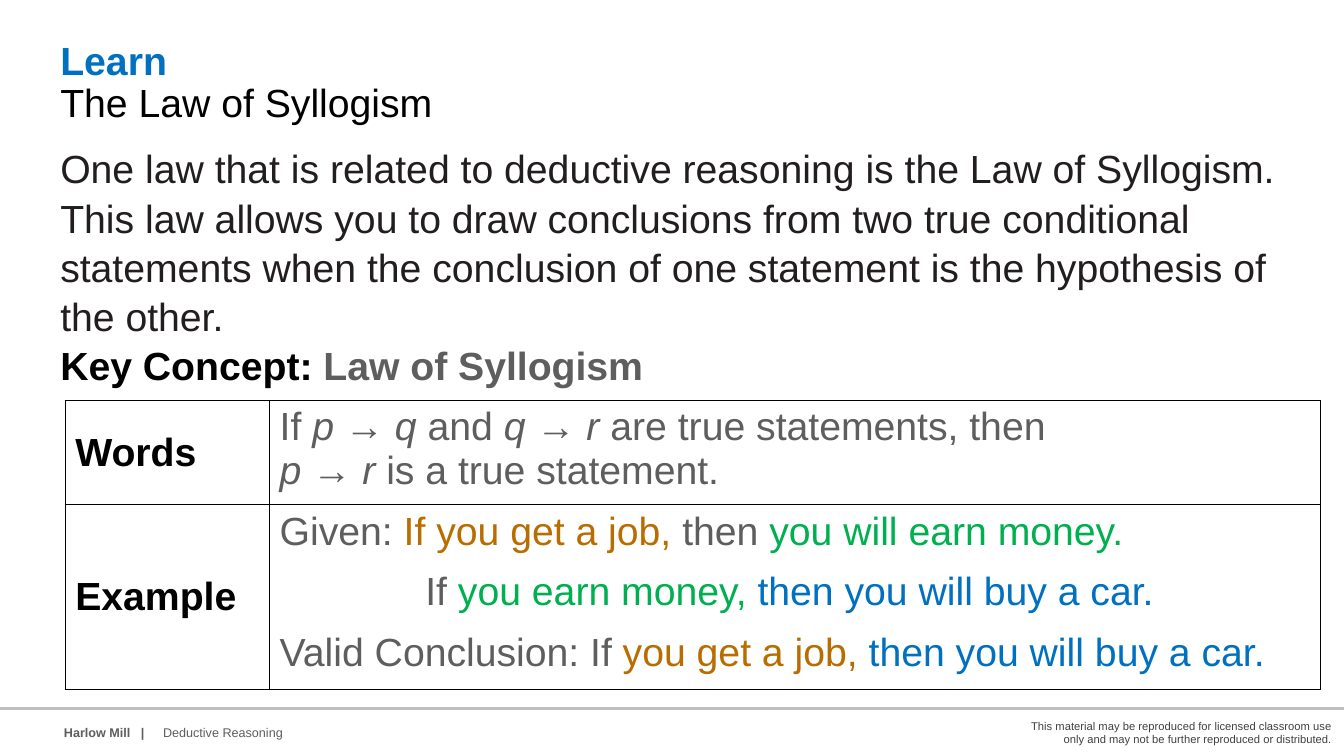
from lxml import etree
from pptx import Presentation
from pptx.dml.color import RGBColor
from pptx.enum.shapes import MSO_CONNECTOR
from pptx.enum.text import MSO_ANCHOR, PP_ALIGN
from pptx.oxml.ns import qn
from pptx.util import Pt

STRAIGHT = MSO_CONNECTOR.STRAIGHT
TOP, MIDDLE = MSO_ANCHOR.TOP, MSO_ANCHOR.MIDDLE
LEFT, CENTER, RIGHT = PP_ALIGN.LEFT, PP_ALIGN.CENTER, PP_ALIGN.RIGHT

FONT = "Arial"
WIDTH, HEIGHT = 960, 540
BLACK, WHITE, GREY = "000000", "FFFFFF", "5E5E5E"
BLUE, GREEN, ORANGE = "0070C0", "00B050", "B96D00"


def rgb(value):
    return RGBColor.from_string(value)


def write(paragraph, text, size=28, color=GREY, bold=False, italic=False):
    """Append text to a paragraph; each newline becomes a line break."""
    for index, line in enumerate(text.split("\n")):
        if index:
            paragraph.add_line_break()
        if line:
            run = paragraph.add_run()
            run.text = line
            font = run.font
            font.name, font.size = FONT, Pt(size)
            font.bold, font.italic = bold, italic
            font.color.rgb = rgb(color)


def add_text_box(slide, box, anchor=TOP, align=LEFT, spacing=1.0, wrap=True):
    """Add an empty text box and return its first paragraph."""
    frame = slide.shapes.add_textbox(*map(Pt, box)).text_frame
    frame.word_wrap = wrap
    frame.vertical_anchor = anchor
    paragraph = frame.paragraphs[0]
    paragraph.alignment, paragraph.line_spacing = align, spacing
    return paragraph


def add_footer(slide, left, top, width, height):
    rule = slide.shapes.add_connector(
        STRAIGHT, Pt(left), Pt(top), Pt(left + width), Pt(top))
    rule.line.color.rgb = rgb("BFBFBF")
    rule.line.width = Pt(1.75)
    etree.SubElement(rule._element.spPr, qn("a:effectLst"))

    publisher = add_text_box(slide, (left + 38.6, top + 8, 81.4, 26), wrap=False)
    write(publisher, "Harlow Mill   |", size=9, bold=True)
    lesson = add_text_box(slide, (left + 109.4, top + 8, 369, 26))
    write(lesson, "Deductive Reasoning", size=9)
    notice = add_text_box(slide, (left + width - 246.5, top - 2, 245, height + 4),
                          anchor=MIDDLE, align=RIGHT)
    write(notice, "This material may be reproduced for licensed classroom use "
          "only and may not be further reproduced or distributed.",
          size=8, color="404040")


def add_introduction(slide, left, top, width):
    title = add_text_box(slide, (left, top, 547, 72), spacing=0.9)
    write(title, "Learn\n", color=BLUE, bold=True)
    write(title, "The Law of Syllogism", color=BLACK)

    law = add_text_box(slide, (left, top + 72, width, 143), spacing=1.05)
    write(law, "One law that is related to deductive reasoning is the Law of "
          "Syllogism. This law allows you to draw conclusions from two true "
          "conditional statements when the conclusion of one statement is the "
          "hypothesis of the other.", color="221E1F")

    heading = add_text_box(slide, (left, top + 212.4, 451, 42),
                           spacing=1.05, wrap=False)
    write(heading, "Key Concept: ", color=BLACK, bold=True)
    write(heading, "Law of Syllogism", bold=True)


def style_cell(cell):
    properties = cell._tc.get_or_add_tcPr()
    for side in ("a:lnL", "a:lnR", "a:lnT", "a:lnB"):
        border = etree.SubElement(properties, qn(side), w=str(Pt(1)))
        fill = etree.SubElement(border, qn("a:solidFill"))
        etree.SubElement(fill, qn("a:srgbClr"), val=BLACK)
    cell.fill.solid()
    cell.fill.fore_color.rgb = rgb(WHITE)


def fill_words(cell):
    """State the law, with its variables in italics."""
    paragraph = cell.text_frame.paragraphs[0]
    for text in ("If ", "p ", "→ ", "q ", "and ", "q ", "→ ", "r ",
                 "are true statements, then\n", "p ", "→ ", "r ",
                 "is a true statement."):
        write(paragraph, text, italic=text.strip() in ("p", "q", "r"))


def fill_example(cell):
    """Write the statements, with matching clauses in one colour."""
    statements = [
        (LEFT, [("Given: ", GREY), ("If you get a job, ", ORANGE),
                ("then ", GREY), ("you will earn money.", GREEN)]),
        (CENTER, [("If ", GREY), ("you earn money, ", GREEN),
                  ("then you will buy a car. ", BLUE)]),
        (LEFT, [("Valid Conclusion: If ", GREY), ("you get a job, ", ORANGE),
                ("then you will buy a car.", BLUE)]),
    ]
    frame = cell.text_frame
    for index, (align, clauses) in enumerate(statements):
        paragraph = frame.add_paragraph() if index else frame.paragraphs[0]
        paragraph.alignment = align
        if index:
            paragraph.space_before = Pt(12)
        for text, color in clauses:
            write(paragraph, text, color=color)


def add_concept_table(slide, left, top, width, height):
    label_width, words_height = 146, 74.4
    table = slide.shapes.add_table(
        2, 2, Pt(left), Pt(top), Pt(width), Pt(height)).table
    table.first_row = table.horz_banding = False
    table.columns[0].width = Pt(label_width)
    table.columns[1].width = Pt(width - label_width)
    table.rows[0].height = Pt(words_height)
    table.rows[1].height = Pt(height - words_height)
    for cell in table.iter_cells():
        style_cell(cell)
    for row, label in enumerate(("Words", "Example")):
        cell = table.cell(row, 0)
        cell.vertical_anchor = MIDDLE
        write(cell.text_frame.paragraphs[0], label, color=BLACK, bold=True)
    fill_words(table.cell(0, 1))
    fill_example(table.cell(1, 1))


def main():
    presentation = Presentation()
    presentation.slide_width, presentation.slide_height = Pt(WIDTH), Pt(HEIGHT)
    slide = presentation.slides.add_slide(presentation.slide_layouts[6])
    add_footer(slide, 0, 506, WIDTH, HEIGHT - 506)
    add_introduction(slide, 36, 26, 888.5)
    add_concept_table(slide, 46.6, 286, 896.4, 206.4)
    presentation.save("out.pptx")


if __name__ == "__main__":
    main()
